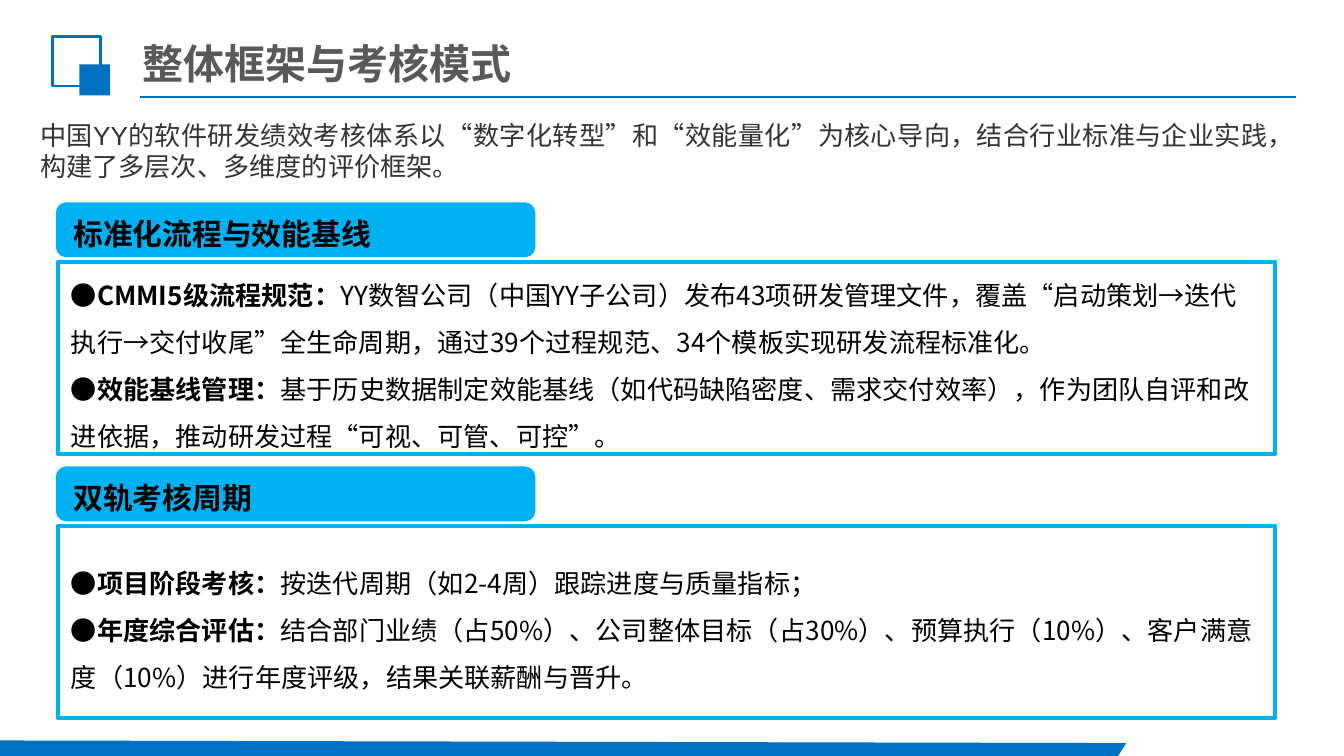
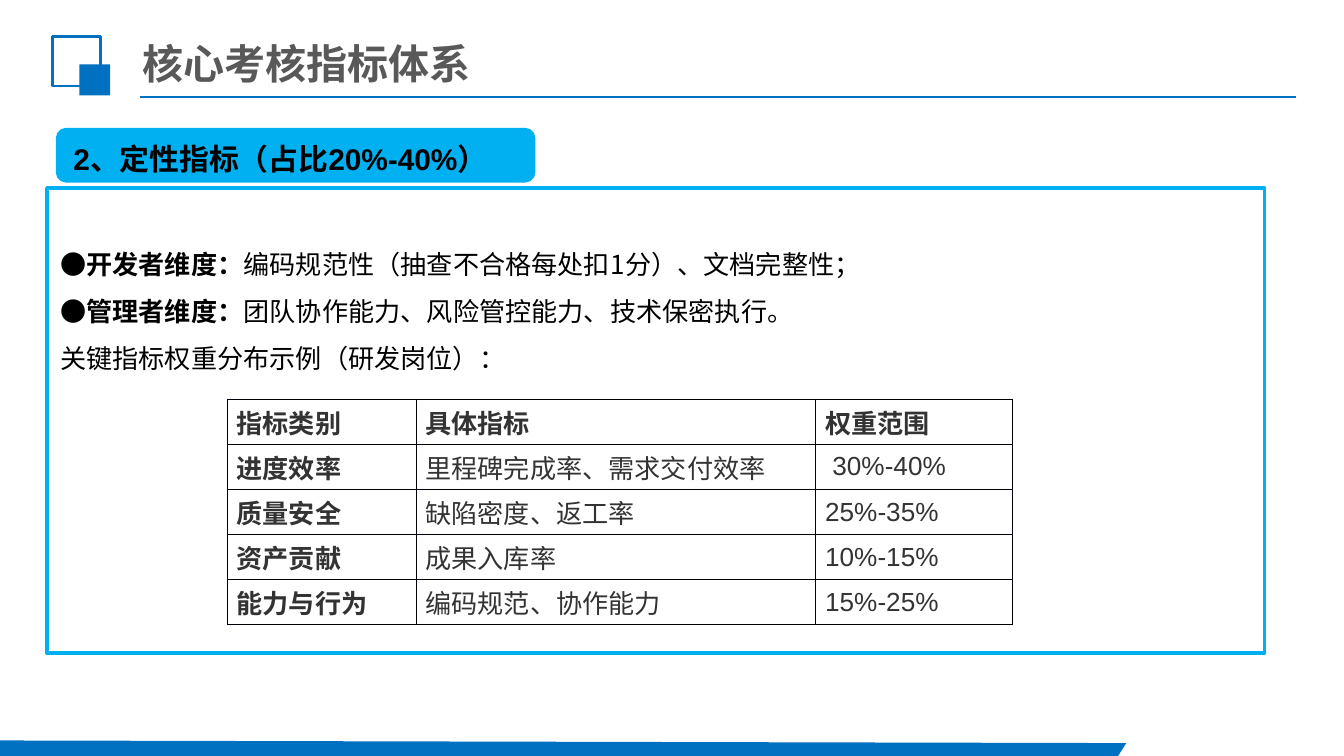
from lxml import etree
from pptx import Presentation
from pptx.dml.color import RGBColor
from pptx.enum.shapes import MSO_CONNECTOR, MSO_SHAPE
from pptx.enum.text import MSO_ANCHOR, PP_ALIGN
from pptx.oxml.ns import qn
from pptx.util import Pt

PX = 4572  # 200 px to the inch
RECT, ROUND = MSO_SHAPE.RECTANGLE, MSO_SHAPE.ROUNDED_RECTANGLE
LINE = MSO_CONNECTOR.STRAIGHT
TOP, MID = MSO_ANCHOR.TOP, MSO_ANCHOR.MIDDLE
LEFT, JUST = PP_ALIGN.LEFT, PP_ALIGN.JUSTIFY

HEX = {"blue": "0070C0", "sky": "00B0F0", "title": "595959",
       "gray": "333333", "black": "000000", "grid": "000008"}
CJK, LATIN = "Noto Sans CJK SC", "Arial"
BODY = {"size": Pt(14), "name": CJK, "bold": False}
BOLD = {**BODY, "bold": True}
ARIAL = {**BODY, "name": LATIN}
TITLE = {**BOLD, "size": Pt(22)}
HEAD = {"size": Pt(16), "name": LATIN, "bold": True}

INTRO = ["中国", "YY", "的软件研发绩效考核体系以", "“", "数字化转型", "”", "和",
         "“", "效能量化", "”",
         "为核心导向，结合行业标准与企业实践，构建了多层次、多维度的评价框架。"]
FLOW = [
    ("●CMMI5级流程规范：",
     "YY数智公司（中国YY子公司）发布43项研发管理文件，覆盖“启动策划→迭代执行→交付收尾”"
     "全生命周期，通过39个过程规范、34个模板实现研发流程标准化。"),
    ("●效能基线管理：",
     "基于历史数据制定效能基线（如代码缺陷密度、需求交付效率），作为团队自评和改进依据，"
     "推动研发过程“可视、可管、可控”。"),
]
CYCLE = [
    ("●项目阶段考核：", "按迭代周期（如2-4周）跟踪进度与质量指标；"),
    ("●年度综合评估：",
     "结合部门业绩（占50%）、公司整体目标（占30%）、预算执行（10%）、客户满意度（10%）"
     "进行年度评级，结果关联薪酬与晋升。"),
]
VIEWS = [
    ("●开发者维度：", "编码规范性（抽查不合格每处扣1分）、文档完整性；"),
    ("●管理者维度：", "团队协作能力、风险管控能力、技术保密执行。"),
    ("", "关键指标权重分布示例（研发岗位）："),
]
WEIGHTS = [
    ("指标类别", "具体指标", "权重范围"),
    ("进度效率", "里程碑完成率、需求交付效率", " 30%-40%"),
    ("质量安全", "缺陷密度、返工率", "25%-35%"),
    ("资产贡献", "成果入库率", "10%-15%"),
    ("能力与行为", "编码规范、协作能力", "15%-25%"),
]


def px(*nums):
    return [n * PX for n in nums]


def rgb(key):
    return RGBColor.from_string(HEX[key])


def put(item, vals):
    for key, val in vals.items():
        setattr(item, key, val)


def write(frame, paras, color, form, box):
    """Fill a frame; each paragraph is a list of (text, font format) runs."""
    put(frame, {"word_wrap": True, **box})
    for i, runs in enumerate(paras):
        para = frame.add_paragraph() if i else frame.paragraphs[0]
        put(para, form)
        for text, font in runs:
            run = para.add_run()
            run.text = text
            put(run.font, font)
            run.font.color.rgb = rgb(color)
            props = run.font._element
            etree.SubElement(props, qn("a:ea"), typeface=CJK)


def paint(shape, fill=None, line=None, width=2):
    shape.shadow.inherit = False
    if fill:
        shape.fill.solid()
        shape.fill.fore_color.rgb = rgb(fill)
    else:
        shape.fill.background()
    if line:
        shape.line.color.rgb = rgb(line)
        shape.line.width = Pt(width)
    else:
        shape.line.fill.background()


def block(slide, kind, at, **look):
    shape = slide.shapes.add_shape(kind, *px(*at))
    paint(shape, **look)
    return shape


def label(slide, at, runs, color, form, box):
    frame = slide.shapes.add_textbox(*px(*at)).text_frame
    write(frame, [runs], color, form, box)


def page(deck, title):
    """Add a slide with the shared rule, emblem, bottom band and title."""
    slide = deck.slides.add_slide(deck.slide_layouts[6])
    rule = slide.shapes.add_connector(LINE, *px(208, 144, 1928, 144))
    rule.line.color.rgb = rgb("blue")
    rule.line.width = Pt(1.25)
    etree.SubElement(rule._element.spPr, qn("a:effectLst"))
    block(slide, RECT, (78, 54, 72, 74), line="blue", width=1.5)
    block(slide, RECT, (118, 96, 46, 46), fill="blue")
    band = slide.shapes.build_freeform(0, 1102, scale=PX)
    band.add_line_segments([(1676, 1106), (1664, 1125), (0, 1125)])
    paint(band.convert_to_shape(), fill="blue")
    wide, high = px(14, 7)
    label(slide, (198, 58, 1290, 72), [(title, TITLE)], "title", {},
          {"vertical_anchor": MID, "margin_left": wide, "margin_right": wide,
           "margin_top": high, "margin_bottom": high})
    return slide


def panel(slide, at, points, box):
    shape = block(slide, RECT, at, line="sky")
    paras = [[(text, font) for text, font in zip(pair, (BOLD, BODY)) if text]
             for pair in points]
    write(shape.text_frame, paras, "black",
          {"line_spacing": 1.5, "alignment": LEFT}, box)


def tab(slide, top, text):
    shape = block(slide, ROUND, (86, top, 708, 76), fill="sky", line="sky")
    write(shape.text_frame, [[(text, HEAD)]], "black",
          {"line_spacing": 1.2, "alignment": LEFT}, {"vertical_anchor": MID})


def edge(cell):
    props = cell._tc.get_or_add_tcPr()
    for side in "LRTB":
        line = etree.SubElement(props, qn(f"a:ln{side}"), w=str(Pt(0.5)))
        fill = etree.SubElement(line, qn("a:solidFill"))
        etree.SubElement(fill, qn("a:srgbClr"), val=HEX["grid"])


def grid(slide, at, widths, rows):
    table = slide.shapes.add_table(len(rows), len(widths), *px(*at)).table
    put(table, {"first_row": False, "horz_banding": False})
    for col, width in zip(table.columns, px(*widths)):
        col.width = width
    side = 14 * PX
    for r, row in enumerate(rows):
        for c, text in enumerate(row):
            cell = table.cell(r, c)
            edge(cell)
            cell.fill.background()
            put(cell, {"vertical_anchor": MID, "margin_left": side,
                       "margin_right": side, "margin_top": 0,
                       "margin_bottom": 0})
            font = BOLD if r == 0 or c == 0 else (BODY, ARIAL)[c - 1]
            write(cell.text_frame, [[(text, font)]], "gray",
                  {"alignment": JUST, "space_after": Pt(3)}, {})


def main():
    deck = Presentation()
    deck.slide_width, deck.slide_height = px(2000, 1125)

    slide = page(deck, "整体框架与考核模式")
    runs = [(text, (BODY, ARIAL)[i % 2]) for i, text in enumerate(INTRO)]
    label(slide, (40, 168, 1906, 114), runs, "gray",
          {"alignment": JUST, "space_after": Pt(3)}, {"vertical_anchor": TOP})
    parts = [("标准化流程与效能基线", FLOW), ("双轨考核周期", CYCLE)]
    for i, (name, points) in enumerate(parts):
        top = 304 + 393 * i
        panel(slide, (86, top + 86, 1812, 286), points,
              {"vertical_anchor": MID})
        tab(slide, top, name)

    slide = page(deck, "核心考核指标体系")
    panel(slide, (70, 280, 1812, 692), VIEWS,
          {"vertical_anchor": TOP, "margin_top": 66 * PX})
    tab(slide, 193, "2、定性指标（占比20%-40%）")
    grid(slide, (338, 594, 1168, 336), (281, 595, 292), WEIGHTS)

    deck.save("out.pptx")


if __name__ == "__main__":
    main()
